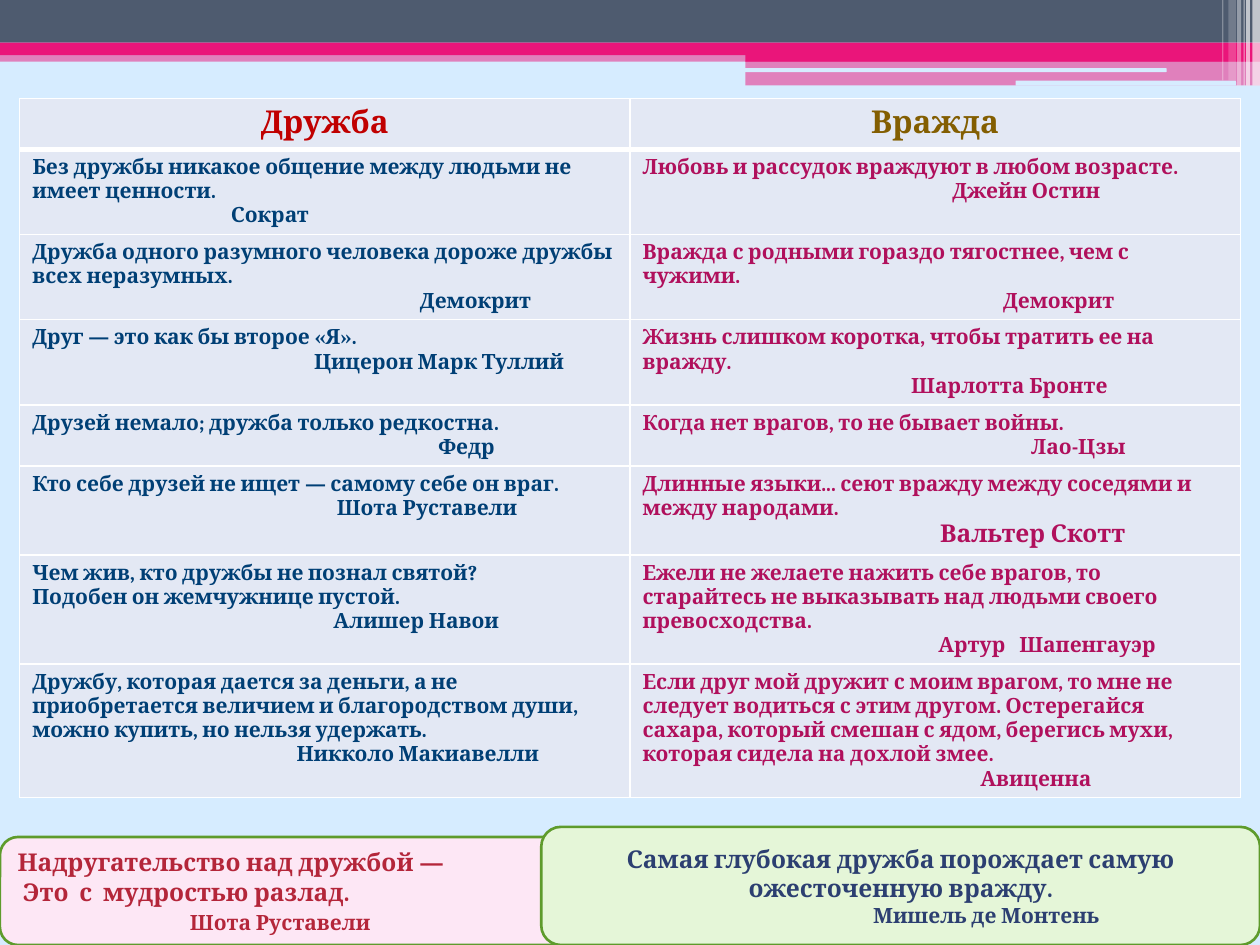
from pptx import Presentation
from pptx.dml.color import RGBColor
from pptx.enum.shapes import MSO_SHAPE
from pptx.enum.text import MSO_ANCHOR, PP_ALIGN
from pptx.oxml.ns import qn
from pptx.util import Pt
from lxml import etree

RECT, ROUND = MSO_SHAPE.RECTANGLE, MSO_SHAPE.ROUNDED_RECTANGLE
LEFT, CENTER = PP_ALIGN.LEFT, PP_ALIGN.CENTER
MIDDLE = MSO_ANCHOR.MIDDLE
FONT = "Cambria"
COLORS = {
    "sky": "D6ECFF", "slate": "4E5B6F", "magenta": "EA157A", "white": "FFFFFF",
    "cell": "E3E8F4", "friendship": "C00000", "enmity": "835E01",
    "blue": "003F75", "berry": "B0105C", "green": "5E9B2C",
    "pink": "FDE7F5", "red": "B4263A", "mint": "E5F6D8", "navy": "2C3F71",
}

# Header decoration: shape, left, top, width, height, colour, opacity in percent
BANDS = [
    (RECT, 0, 28.8, 720, 6.5, "magenta", 50),
    (RECT, 0, 0, 720, 24.4, "slate", 100),
    (RECT, 0, 24.4, 720, 7.2, "magenta", 100),
    (RECT, 426, 28.1, 294, 7.2, "magenta", 100),
    (RECT, 426, 34.6, 294, 14.2, "magenta", 50),
    (ROUND, 425.5, 39, 241.2, 2.2, "sky", 100),
    (ROUND, 580.3, 46.1, 126, 2.9, "sky", 100),
]
# Light stripes at the right edge: left, width, height, opacity
STRIPES = [
    (715.7, 4.3, 49, 65), (712.1, 2.2, 49, 65), (710.6, 0.7, 49, 60),
    (707, 2.2, 49, 40), (702, 4.3, 46, 20), (698.4, 0.7, 46, 30),
]

# Each quotation: its lines, author, author's indent, author's text size
FRIENDSHIP = [
    (["Без дружбы никакое общение между людьми не имеет ценности."], "Сократ", 113.5, 12),
    (["Дружба одного разумного человека дороже дружбы всех неразумных."], "Демокрит", 221.5, 12),
    (["Друг — это как бы второе «Я»."], "Цицерон Марк Туллий", 161, 12),
    (["Друзей немало; дружба только редкостна."], "Федр", 232, 12),
    (["Кто себе друзей не ищет — самому себе он враг."], "Шота Руставели", 174, 12),
    (["Чем жив, кто дружбы не познал святой?", "Подобен он жемчужнице пустой."],
     "Алишер Навои", 172, 12),
    (["Дружбу, которая дается за деньги, а не приобретается величием и благородством души, "
      "можно купить, но нельзя удержать."], "Никколо Макиавелли", 151, 12),
]
ENMITY = [
    (["Любовь и рассудок враждуют в любом возрасте."], "Джейн Остин", 177, 12),
    (["Вражда с родными гораздо тягостнее, чем с чужими."], "Демокрит", 206, 12),
    (["Жизнь слишком коротка, чтобы тратить ее на вражду."], "Шарлотта Бронте", 153.5, 12),
    (["Когда нет врагов, то не бывает войны."], "Лао-Цзы", 222, 12),
    (["Длинные языки... сеют вражду между соседями и между народами."], "Вальтер Скотт", 170, 14),
    (["Ежели не желаете нажить себе врагов, то старайтесь не выказывать над людьми своего "
      "превосходства."], "Артур   Шапенгауэр", 169, 12),
    (["Если друг мой дружит с моим врагом, то мне не следует водиться с этим другом. "
      "Остерегайся сахара, который смешан с ядом, берегись мухи, которая сидела на дохлой змее."],
     "Авиценна", 193, 12),
]


def rgb(name):
    return RGBColor.from_string(COLORS[name])


def add_panel(page, kind, box, color, opacity=100, line=None):
    shape = page.shapes.add_shape(kind, *map(Pt, box))
    shape.shadow.inherit = False
    shape.fill.solid()
    shape.fill.fore_color.rgb = rgb(color)
    if opacity < 100:
        tint = shape.fill._xPr.find(qn("a:solidFill"))[0]
        etree.SubElement(tint, qn("a:alpha"), val=str(opacity * 1000))
    if line:
        shape.line.color.rgb = rgb(line)
        shape.line.width = Pt(1.5)
    else:
        shape.line.fill.background()
    return shape


def write_lines(frame, lines, color, align=LEFT):
    """Write one paragraph per (text, size, indent) entry."""
    frame.text = "\n".join(text for text, _, _ in lines)
    for para, (_, size, indent) in zip(frame.paragraphs, lines):
        para.alignment = align
        if indent:
            props = para._p.get_or_add_pPr()
            props.set("marL", str(Pt(indent)))
            props.set("indent", "0")
        for span in para.runs:
            span.font.name = FONT
            span.font.size = Pt(size)
            span.font.bold = True
            span.font.color.rgb = rgb(color)


def style_cell(cell, widths):
    """Draw white borders with the given widths, then fill the cell."""
    props = cell._tc.get_or_add_tcPr()
    for side, width in widths.items():
        border = etree.SubElement(props, qn(f"a:ln{side}"), w=str(Pt(width)))
        fill = etree.SubElement(border, qn("a:solidFill"))
        etree.SubElement(fill, qn("a:srgbClr"), val=COLORS["white"])
    cell.fill.solid()
    cell.fill.fore_color.rgb = rgb("cell")


def add_quote_table(page):
    columns = [("Дружба", "friendship", FRIENDSHIP, "blue"),
               ("Вражда", "enmity", ENMITY, "berry")]
    holder = page.shapes.add_table(len(FRIENDSHIP) + 1, len(columns),
                                   Pt(11.25), Pt(56.2), Pt(697.5), Pt(413.3))
    table = holder.table
    for row in table.rows:
        row.height = Pt(29.2)
    for col, (title, title_color, quotes, color) in enumerate(columns):
        write_lines(table.cell(0, col).text_frame, [(title, 18, 0)], title_color, CENTER)
        for row, (texts, author, indent, size) in enumerate(quotes, start=1):
            lines = [(text, 12, 0) for text in texts] + [(author, size, indent)]
            write_lines(table.cell(row, col).text_frame, lines, color)
        for row in range(len(quotes) + 1):
            widths = {"L": 1, "R": 1, "T": 3 if row == 1 else 1, "B": 3 if row == 0 else 1}
            style_cell(table.cell(row, col), widths)


def add_callout(page, box, fill, lines, color, align=LEFT):
    shape = add_panel(page, ROUND, box, fill, line="green")
    frame = shape.text_frame
    frame.word_wrap = True
    frame.vertical_anchor = MIDDLE
    write_lines(frame, lines, color, align)
    return frame


def main():
    deck = Presentation()
    deck.slide_width, deck.slide_height = Pt(720), Pt(540)
    page = deck.slides.add_slide(deck.slide_layouts[6])
    page.background.fill.solid()
    page.background.fill.fore_color.rgb = rgb("sky")

    # Header
    for kind, left, top, width, height, color, opacity in BANDS:
        add_panel(page, kind, (left, top, width, height), color, opacity)
    for left, width, height, opacity in STRIPES:
        add_panel(page, RECT, (left, 0, width, height), "white", opacity)

    # Quotations
    add_quote_table(page)

    # Closing thoughts
    frame = add_callout(page, (0, 478.3, 473, 61.7), "pink", [
        ("Надругательство над дружбой —", 14, 0),
        ("Это  с  мудростью разлад.", 14, 3),
        ("Шота Руставели", 12, 98.5)], "red")
    frame.paragraphs[-1].space_before = Pt(2)
    add_callout(page, (309.3, 472.5, 410.7, 67.5), "mint", [
        ("Самая глубокая дружба порождает самую ожесточенную вражду.", 14, 0),
        ("Мишель де Монтень", 12, 98)], "navy", CENTER)

    deck.save("out.pptx")


if __name__ == "__main__":
    main()
